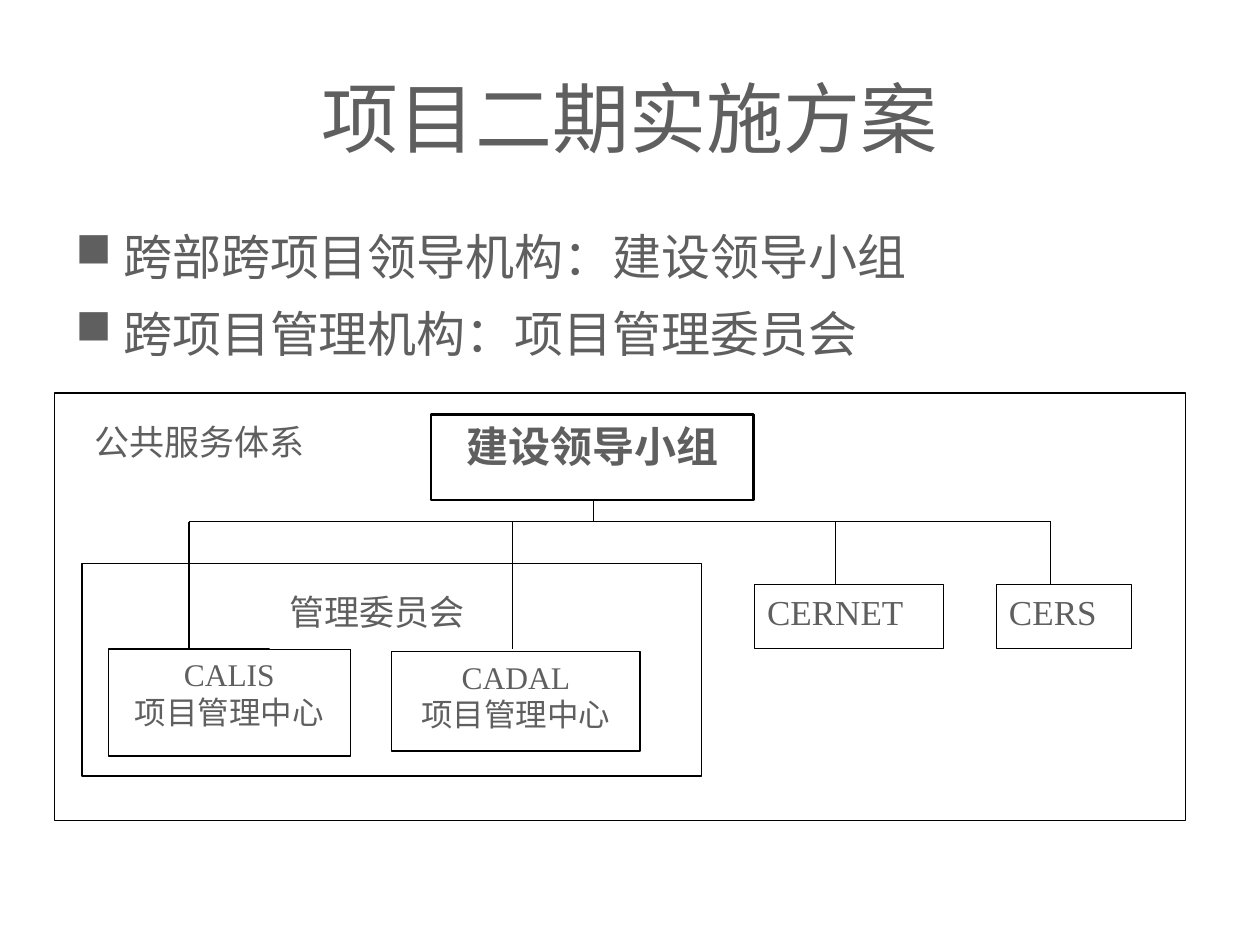
from pptx import Presentation
from pptx.dml.color import RGBColor
from pptx.enum.shapes import MSO_CONNECTOR, MSO_SHAPE
from pptx.enum.text import MSO_ANCHOR, PP_ALIGN
from pptx.oxml.ns import qn
from pptx.util import Inches, Pt

RECTANGLE = MSO_SHAPE.RECTANGLE
STRAIGHT = MSO_CONNECTOR.STRAIGHT
CENTER, LEFT, JUSTIFY = PP_ALIGN.CENTER, PP_ALIGN.LEFT, PP_ALIGN.JUSTIFY
TOP, MIDDLE = MSO_ANCHOR.TOP, MSO_ANCHOR.MIDDLE

COLORS = {"text": "5F5F5F", "line": "000000", "fill": "FFFFFF"}
SERIF = "Times New Roman"

TITLE = "项目二期实施方案"
BULLETS = ["跨部跨项目领导机构：建设领导小组", "跨项目管理机构：项目管理委员会"]

# Each box: place (left, top, width, height), lines, alignment, outline, font
FRAME = ((0.43, 3.12, 8.98, 3.39), [], LEFT, 0.75, {})
COMMITTEE = ((0.65, 4.47, 4.92, 1.69), [], LEFT, 0.75, {})
LEADERS = ((3.42, 3.29, 2.56, 0.68), ["建设领导小组"], CENTER, 1.5,
           {"size": Pt(24), "bold": True})
NETWORKS = [
    ((5.99, 4.64, 1.5, 0.51), ["CERNET"], JUSTIFY, 0.75, {"size": Pt(20)}),
    ((7.91, 4.64, 1.07, 0.51), ["CERS"], JUSTIFY, 0.75, {"size": Pt(20)}),
]
CENTERS_AND_LABELS = [
    ((0.86, 5.15, 1.92, 0.85), ["CALIS", "项目管理中心"], CENTER, 0.75, {"size": Pt(18)}),
    ((2.14, 4.64, 1.71, 0.51), ["管理委员会"], CENTER, 0, {"size": Pt(20)}),
    ((0.65, 3.29, 1.92, 0.51), ["公共服务体系"], JUSTIFY, 0, {"size": Pt(20)}),
    ((3.11, 5.17, 1.97, 0.79), ["CADAL", "项目管理中心"], CENTER, 0.75, {"size": Pt(18)}),
]

TRUNK_X, LEADERS_BOTTOM, BUS_Y = 4.71, 3.97, 4.14
NETWORK_DROPS, NETWORK_TOP = [6.63, 8.34], 4.64
CENTER_DROPS, CENTER_TOP = [1.5, 4.07], 5.15


def color(name):
    return RGBColor.from_string(COLORS[name])


def write(frame, lines, align, anchor=TOP, **font):
    frame.word_wrap = True
    frame.vertical_anchor = anchor
    for index, line in enumerate(lines):
        para = frame.paragraphs[0] if index == 0 else frame.add_paragraph()
        para.alignment = align
        span = para.add_run()
        span.text = line
        for key, value in {"name": SERIF, **font}.items():
            setattr(span.font, key, value)
        span.font.color.rgb = color("text")


def add_text(slide, place, lines, align, **font):
    box = slide.shapes.add_textbox(*map(Inches, place))
    write(box.text_frame, lines, align, **font)
    return box.text_frame


def add_box(slide, place, lines, align, outline, font):
    box = slide.shapes.add_shape(RECTANGLE, *map(Inches, place))
    box.shadow.inherit = False
    box.fill.solid()
    box.fill.fore_color.rgb = color("fill")
    if outline:
        box.line.color.rgb = color("line")
        box.line.width = Pt(outline)
    else:
        box.line.fill.background()
    write(box.text_frame, lines, align, **font)


def add_line(slide, *ends):
    line = slide.shapes.add_connector(STRAIGHT, *map(Inches, ends))
    line.line.color.rgb = color("line")
    line.line.width = Pt(0.75)
    properties = line._element.spPr
    properties.append(properties.makeelement(qn("a:effectLst"), {}))


def add_drops(slide, positions, bottom):
    for x in positions:
        add_line(slide, x, BUS_Y, x, bottom)


def add_bullets(frame):
    for index, para in enumerate(frame.paragraphs):
        para.space_before = Pt(10 if index else 0)
        properties = para._p.get_or_add_pPr()
        properties.set("marL", str(Inches(0.38)))
        properties.set("indent", str(-Inches(0.38)))
        bullet = properties.makeelement(qn("a:buChar"), {"char": "■"})
        properties.append(bullet)


def main():
    deck = Presentation()
    deck.slide_width, deck.slide_height = Inches(10), Inches(7.5)
    slide = deck.slides.add_slide(deck.slide_layouts[6])

    add_text(slide, (0.5, 0.3, 9, 1.25), [TITLE], CENTER,
             anchor=MIDDLE, name="Arial", size=Pt(44))
    add_bullets(add_text(slide, (0.5, 1.75, 9, 4.95), BULLETS, LEFT, size=Pt(28)))

    add_box(slide, *FRAME)
    add_box(slide, *LEADERS)
    add_line(slide, TRUNK_X, LEADERS_BOTTOM, TRUNK_X, BUS_Y)
    add_line(slide, CENTER_DROPS[0], BUS_Y, NETWORK_DROPS[-1], BUS_Y)
    add_drops(slide, NETWORK_DROPS, NETWORK_TOP)
    for network in NETWORKS:
        add_box(slide, *network)
    add_box(slide, *COMMITTEE)
    add_drops(slide, CENTER_DROPS, CENTER_TOP)
    for box in CENTERS_AND_LABELS:
        add_box(slide, *box)

    deck.save("out.pptx")


if __name__ == "__main__":
    main()
